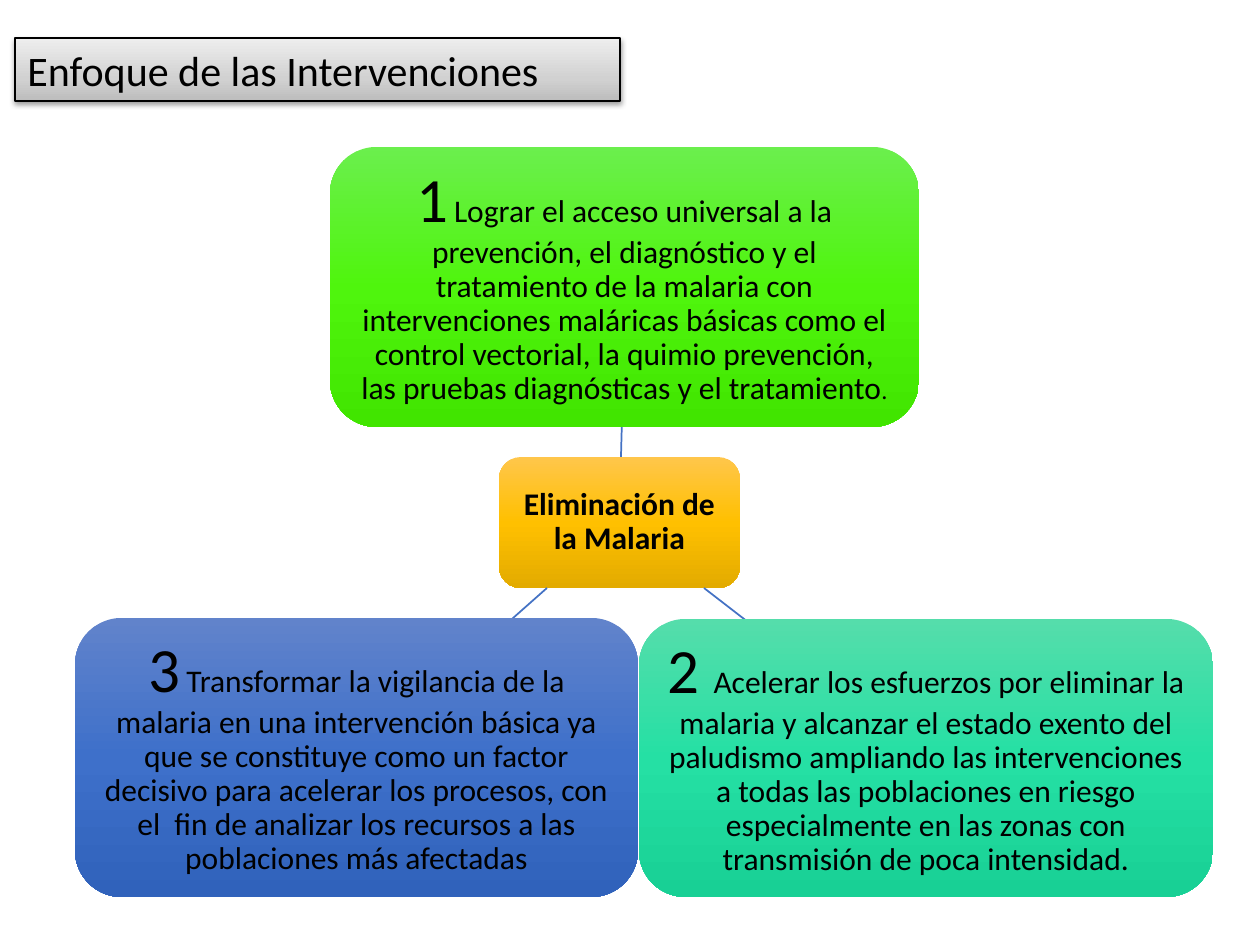
from dataclasses import dataclass

from pptx import Presentation
from pptx.dml.color import RGBColor
from pptx.enum.shapes import MSO_CONNECTOR, MSO_SHAPE
from pptx.enum.text import MSO_ANCHOR, MSO_AUTO_SIZE, PP_ALIGN
from pptx.oxml import parse_xml
from pptx.oxml.ns import nsdecls, qn
from pptx.util import Emu, Pt

RECT, ROUND = MSO_SHAPE.RECTANGLE, MSO_SHAPE.ROUNDED_RECTANGLE
STRAIGHT = MSO_CONNECTOR.STRAIGHT
LEFT, CENTER = PP_ALIGN.LEFT, PP_ALIGN.CENTER
TOP, MIDDLE = MSO_ANCHOR.TOP, MSO_ANCHOR.MIDDLE
PX_PER_INCH = 126


@dataclass(frozen=True)
class Theme:
    font: str = "Calibri"
    ink: str = "000000"
    link: str = "4472C4"
    title_size: int = 24
    number_size: int = 36
    body_size: int = 18
    # Gradient stops: (position in percent, colour)
    grey: tuple = ((0, "BDBDBD"), (35, "D1D1D1"), (100, "EEEEEE"))
    gold: tuple = ((0, "FFC64B"), (50, "FFC000"), (100, "E3AB00"))
    lime: tuple = ((0, "6BEF4D"), (50, "4FF50D"), (100, "41E500"))
    teal: tuple = ((0, "55DDAB"), (50, "25E0A4"), (100, "18D095"))
    blue: tuple = ((0, "6183CB"), (50, "3E70CA"), (100, "3062BB"))


THEME = Theme()

# Each goal: box, gradient, link from the hub (x1, y1, x2, y2), text runs
GOALS = [
    ((330, 147, 589, 280), THEME.lime, (621, 457, 622, 420), [
        ("1", THEME.number_size), (" ", 14),
        ("Lograr el acceso universal a la prevención, el diagnóstico y el "
         "tratamiento de la malaria con intervenciones maláricas básicas como "
         "el control vectorial, la quimio prevención, las pruebas diagnósticas "
         "y el tratamiento", THEME.body_size), (".", 14)]),
    ((639, 619, 574, 278), THEME.teal, (704, 588, 757, 629), [
        ("2 ", THEME.number_size),
        ("Acelerar los esfuerzos por eliminar la malaria y alcanzar el estado "
         "exento del paludismo ampliando las intervenciones a todas las "
         "poblaciones en riesgo especialmente en las zonas con transmisión de "
         "poca intensidad.", THEME.body_size)]),
    ((75, 618, 563, 279), THEME.blue, (547, 588, 503, 627), [
        ("3", THEME.number_size), (" ", 16),
        ("Transformar la vigilancia de la malaria en una intervención básica "
         "ya que se constituye como un factor decisivo para acelerar los "
         "procesos, con el  fin de analizar los recursos a las poblaciones "
         "más afectadas", THEME.body_size)]),
]


def px(n):
    return Emu(round(n * 914400 / PX_PER_INCH))


def set_gradient(s, stops, angle):
    stops_xml = "".join(
        f'<a:gs pos="{pos * 1000}"><a:srgbClr val="{color}"/></a:gs>'
        for pos, color in stops)
    grad = parse_xml(
        f'<a:gradFill {nsdecls("a")} rotWithShape="1"><a:gsLst>{stops_xml}'
        f'</a:gsLst><a:lin ang="{angle * 60000}" scaled="0"/></a:gradFill>')
    s.fill.background()
    props = s._element.spPr
    props.replace(props.find(qn("a:noFill")), grad)


def add_shadow(s):
    effects = s._element.spPr.find(qn("a:effectLst"))
    effects.append(parse_xml(
        f'<a:outerShdw {nsdecls("a")} blurRad="40000" dist="20000" '
        'dir="5400000" rotWithShape="0"><a:srgbClr val="000000">'
        '<a:alpha val="38000"/></a:srgbClr></a:outerShdw>'))


def add_text(s, runs, align, anchor, bold=False, spacing=None, margin=None):
    tf = s.text_frame
    frame = {"word_wrap": True, "vertical_anchor": anchor}
    if margin is not None:
        sides = ("left", "top", "right", "bottom")
        frame.update({f"margin_{side}": px(margin) for side in sides})
    for name, value in frame.items():
        setattr(tf, name, value)
    p = tf.paragraphs[0]
    p.alignment, p.line_spacing = align, spacing
    for text, size in runs:
        r = p.add_run()
        r.text = text
        style = {"name": THEME.font, "size": Pt(size), "bold": bold}
        for name, value in style.items():
            setattr(r.font, name, value)
        r.font.color.rgb = RGBColor.from_string(THEME.ink)


def add_block(slide, kind, box, stops, angle):
    s = slide.shapes.add_shape(kind, *map(px, box))
    s.shadow.inherit = False
    set_gradient(s, stops, angle)
    s.line.fill.background()
    return s


def add_title(slide, text):
    s = add_block(slide, RECT, (15, 38, 605, 63), THEME.grey, 270)
    s.line.color.rgb = RGBColor.from_string(THEME.ink)
    s.line.width = Pt(0.75)
    add_shadow(s)
    add_text(s, [(text, THEME.title_size)], LEFT, TOP)
    s.text_frame.auto_size = MSO_AUTO_SIZE.SHAPE_TO_FIT_TEXT


def add_node(slide, box, stops, runs, margin, bold=False):
    s = add_block(slide, ROUND, box, stops, 90)
    add_text(s, runs, CENTER, MIDDLE, bold, 0.9, margin)


def add_link(slide, ends):
    s = slide.shapes.add_connector(STRAIGHT, *map(px, ends))
    s.line.color.rgb = RGBColor.from_string(THEME.link)
    s.line.width = Pt(1)
    s._element.spPr.append(parse_xml(f'<a:effectLst {nsdecls("a")}/>'))


def main():
    prs = Presentation()
    prs.slide_width, prs.slide_height = px(1260), px(945)
    slide = prs.slides.add_slide(prs.slide_layouts[6])

    add_title(slide, "Enfoque de las Intervenciones")

    # Hub in the middle
    add_node(slide, (499, 457, 241, 131), THEME.gold,
             [("Eliminación de la Malaria", THEME.body_size)], 6, bold=True)

    # Goals around it, each covering the outer end of its link
    for box, stops, ends, runs in GOALS:
        add_link(slide, ends)
        add_node(slide, box, stops, runs, 13)

    prs.save("out.pptx")


if __name__ == "__main__":
    main()
